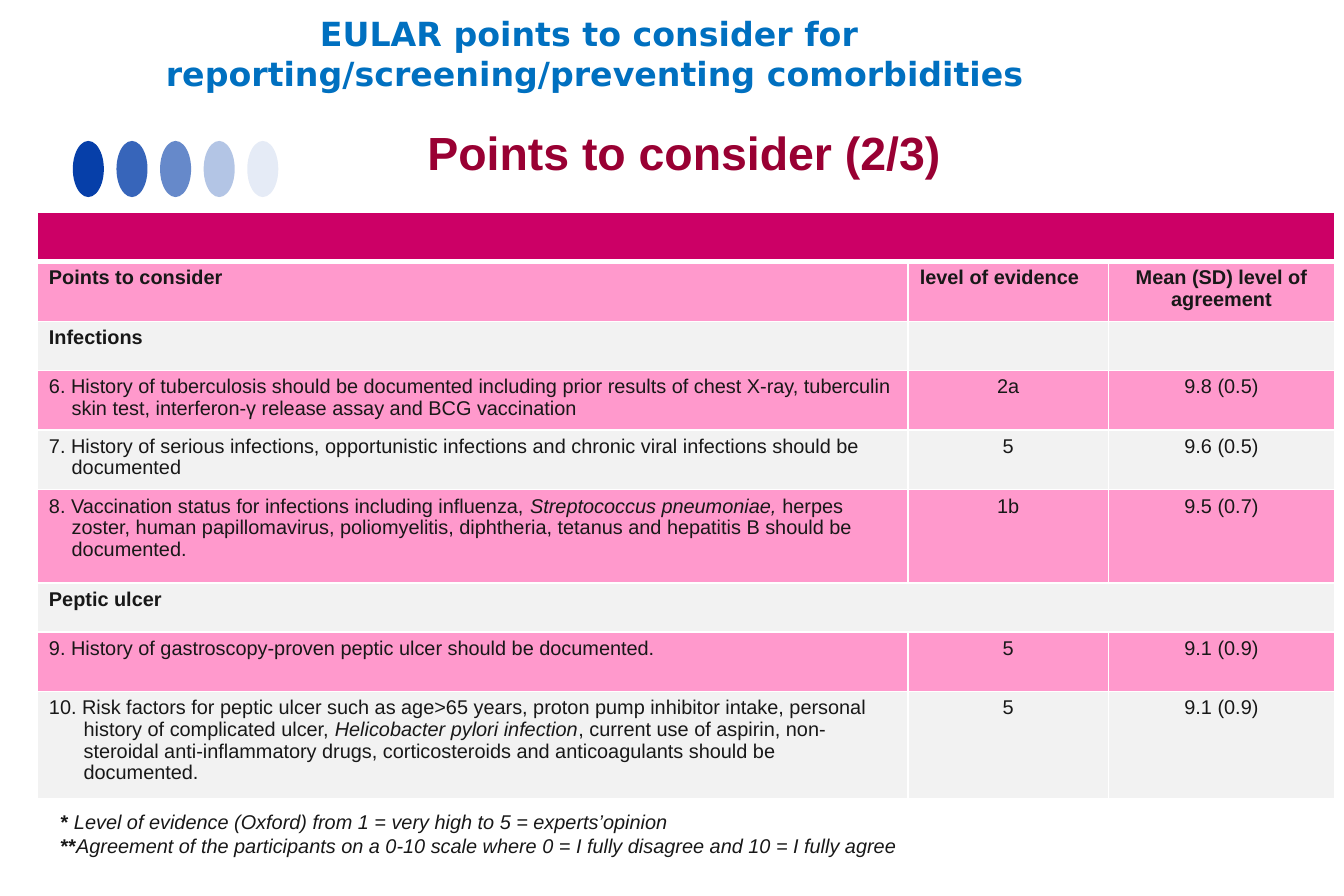
from dataclasses import dataclass

from lxml import etree
from pptx import Presentation
from pptx.dml.color import RGBColor
from pptx.enum.shapes import MSO_SHAPE as SHAPE
from pptx.enum.text import PP_ALIGN as ALIGN
from pptx.oxml.ns import qn
from pptx.util import Inches, Pt


@dataclass(frozen=True)
class Theme:
    font: str = "Arial"
    title_font: str = "DejaVu Sans"
    title: str = "0070C0"
    subtitle: str = "990033"
    text: str = "181818"
    dot: str = "063FA9"
    banner: str = "CC0066"
    pink: str = "FF99CC"
    grey: str = "F2F2F2"
    white: str = "FFFFFF"
    title_size: int = 20
    subtitle_size: int = 28
    body_size: int = 12


T = Theme()

DOT_OPACITY = [100, 80, 61, 30, 10]
COL_WIDTHS = [7.29, 1.68, 1.89]
# Each row: height, hanging indent, point, level of evidence, agreement
# A text is a string or a list of (text, style) runs; style holds b and i
ROWS = [
    (0.5, 0, [("Points to consider", "b")], [("level of evidence", "b")],
     [("Mean (SD) level of\nagreement", "b")]),
    (0.41, 0, [("Infections", "b")], "", ""),
    (0.5, 0.19, "6. History of tuberculosis should be documented including prior "
     "results of chest X-ray, tuberculin skin test, interferon-γ release assay "
     "and BCG vaccination", "2a", "9.8 (0.5)"),
    (0.5, 0.19, "7. History of serious infections, opportunistic infections and "
     "chronic viral infections should be documented", "5", "9.6 (0.5)"),
    (0.78, 0.19, [("8. Vaccination status for infections including influenza, ", ""),
                  ("Streptococcus pneumoniae, ", "i"),
                  ("herpes zoster, human papillomavirus, poliomyelitis, diphtheria, "
                   "tetanus and hepatitis B should be documented.", "")],
     "1b", "9.5 (0.7)"),
    (0.41, 0, [("Peptic ulcer", "b")], None, None),
    (0.5, 0, "9. History of gastroscopy-proven peptic ulcer should be documented.",
     "5", "9.1 (0.9)"),
    (0.9, 0.29, [("10. Risk factors for peptic ulcer such as age>65 years, proton pump "
                  "inhibitor intake, personal history of complicated ulcer, ", ""),
                 ("Helicobacter pylori infection", "i"),
                 (", current use of aspirin, non-steroidal anti-inflammatory drugs, "
                  "corticosteroids and anticoagulants should be documented.", "")],
     "5", "9.1 (0.9)"),
]
BANNER_HEIGHT = 0.41


def rgb(color):
    return RGBColor.from_string(color)


def write(tf, text, size=T.body_size, color=T.text, font=T.font,
          align=ALIGN.LEFT, hang=0, spacing=None):
    """Fill a text frame; a line break in a run starts a new paragraph."""
    runs = [(text, "")] if isinstance(text, str) else text
    tf.word_wrap = True
    p = None
    for content, style in runs:
        for i, line in enumerate(content.split("\n")):
            if p is None or i:
                p = tf.paragraphs[0] if p is None else tf.add_paragraph()
                p.alignment = align
                p.line_spacing = spacing
                if hang:
                    pPr = p._p.get_or_add_pPr()
                    pPr.set("marL", str(Inches(hang)))
                    pPr.set("indent", str(-Inches(hang)))
            if not line:
                continue
            r = p.add_run()
            r.text = line
            r.font.name, r.font.size = font, Pt(size)
            r.font.bold, r.font.italic = "b" in style, "i" in style
            r.font.color.rgb = rgb(color)


def add_text(slide, box, text, **fmt):
    sp = slide.shapes.add_textbox(*map(Inches, box))
    write(sp.text_frame, text, **fmt)


def add_dots(slide, left, top, width, height, pitch):
    """Row of ellipses that fade to the right."""
    for i, opacity in enumerate(DOT_OPACITY):
        sp = slide.shapes.add_shape(SHAPE.OVAL, Inches(left + i * pitch), Inches(top),
                                    Inches(width), Inches(height))
        sp.shadow.inherit = False
        sp.line.fill.background()
        sp.fill.solid()
        sp.fill.fore_color.rgb = rgb(T.dot)
        if opacity < 100:
            clr = sp._element.spPr.find(qn("a:solidFill"))[0]
            etree.SubElement(clr, qn("a:alpha"), val=str(opacity * 1000))


def style_cell(cell, fill, bottom=1):
    """White borders and a solid fill."""
    tcPr = cell._tc.get_or_add_tcPr()
    for side, width in (("L", 1), ("R", 1), ("T", 1), ("B", bottom)):
        ln = etree.SubElement(tcPr, qn(f"a:ln{side}"), w=str(Pt(width)))
        etree.SubElement(etree.SubElement(ln, qn("a:solidFill")),
                         qn("a:srgbClr"), val=T.white)
    cell.fill.solid()
    cell.fill.fore_color.rgb = rgb(fill)


def add_points_table(slide, left, top):
    heights = [BANNER_HEIGHT] + [row[0] for row in ROWS]
    table = slide.shapes.add_table(
        len(heights), len(COL_WIDTHS), Inches(left), Inches(top),
        Inches(sum(COL_WIDTHS)), Inches(sum(heights))).table
    for col, width in zip(table.columns, COL_WIDTHS):
        col.width = Inches(width)
    for row, height in zip(table.rows, heights):
        row.height = Inches(height)

    # Banner
    for cell in table.rows[0].cells:
        style_cell(cell, T.banner, bottom=3)
    table.cell(0, 0).merge(table.cell(0, 2))

    # Banded rows
    for n, (_, hang, *texts) in enumerate(ROWS, start=1):
        for c, text in enumerate(texts):
            cell = table.cell(n, c)
            style_cell(cell, T.pink if n % 2 else T.grey)
            if text:
                left_aligned = c == 0 or (n == 1 and c == 1)
                write(cell.text_frame, text, spacing=0.97,
                      align=ALIGN.LEFT if left_aligned else ALIGN.CENTER,
                      hang=0 if c else hang)
        if texts[1] is None:
            table.cell(n, 0).merge(table.cell(n, 2))


def add_headings(slide):
    add_text(slide, (0.06, 0.06, 9.84, 0.77),
             [("EULAR points to consider for \n"
               "reporting/screening/preventing comorbidities", "b")],
             size=T.title_size, color=T.title, font=T.title_font, align=ALIGN.CENTER)
    add_text(slide, (3.48, 0.99, 4.6, 0.57), [("Points to consider (2/3)", "b")],
             size=T.subtitle_size, color=T.subtitle)


def add_footnotes(slide, box):
    add_text(slide, box, [
        ("* ", "b"),
        ("Level of evidence (Oxford) from 1 = very high to 5 = experts’opinion\n", "i"),
        ("**", "b"),
        ("Agreement of the participants on a 0-10 scale where 0 = I fully disagree "
         "and 10 = I fully agree", "i")])


def main():
    prs = Presentation()
    prs.slide_width, prs.slide_height = Inches(11.25), Inches(7.5)
    slide = prs.slides.add_slide(prs.slide_layouts[6])
    add_dots(slide, 0.61, 1.18, 0.26, 0.47, pitch=0.365)
    add_headings(slide)
    add_points_table(slide, 0.31, 1.78)
    add_footnotes(slide, (0.41, 6.73, 9.29, 0.5))
    prs.save("out.pptx")


if __name__ == "__main__":
    main()
